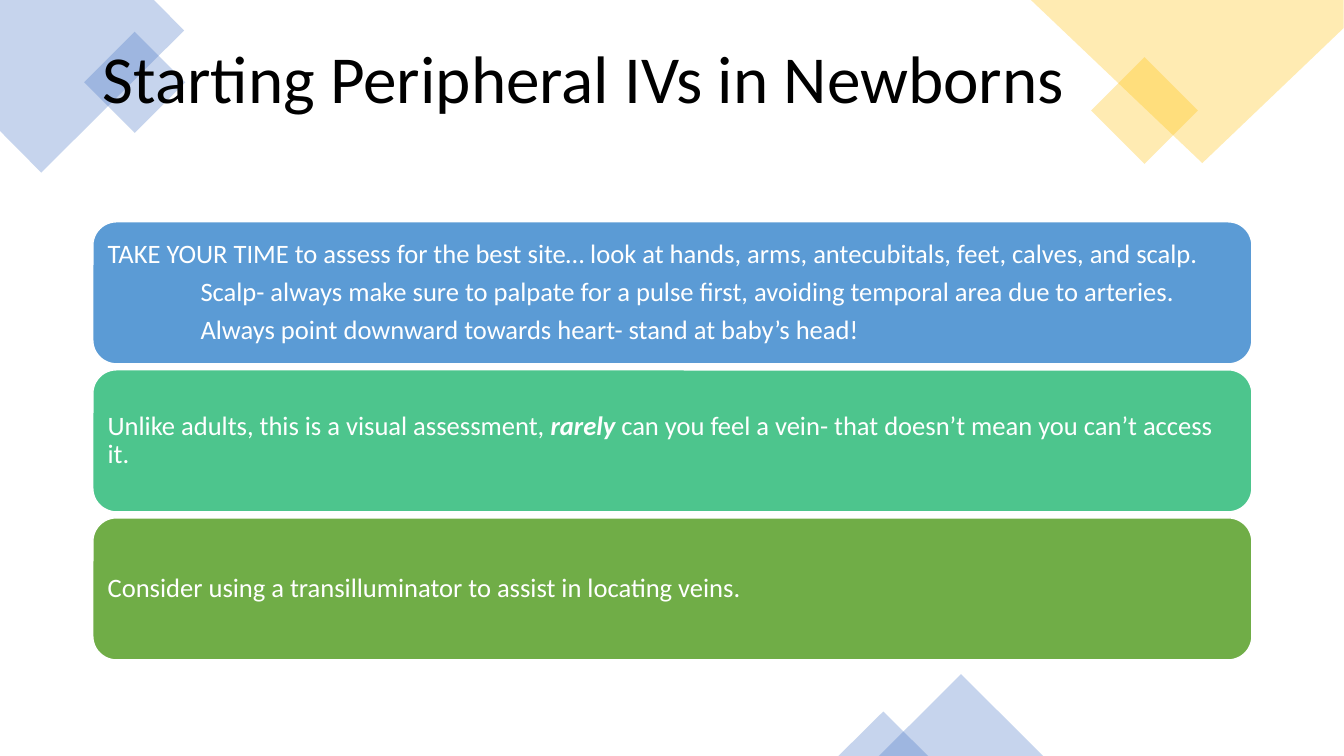
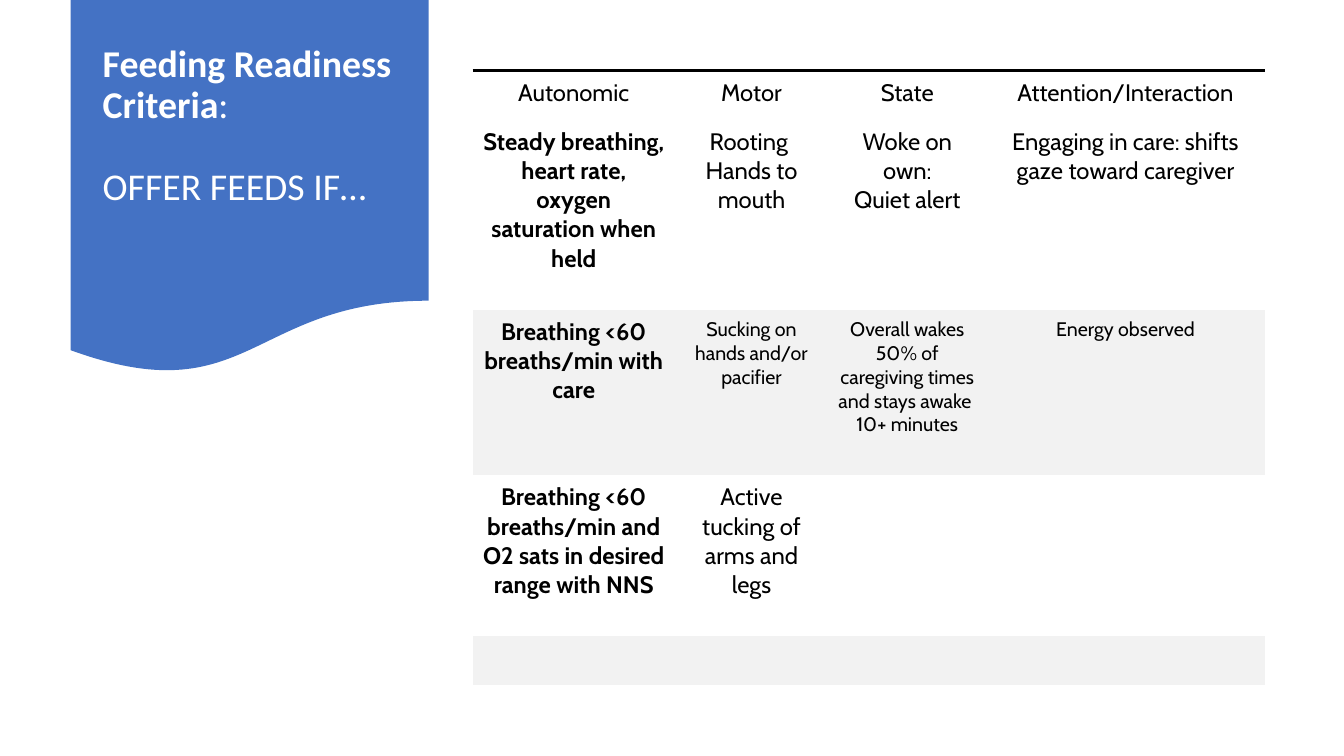
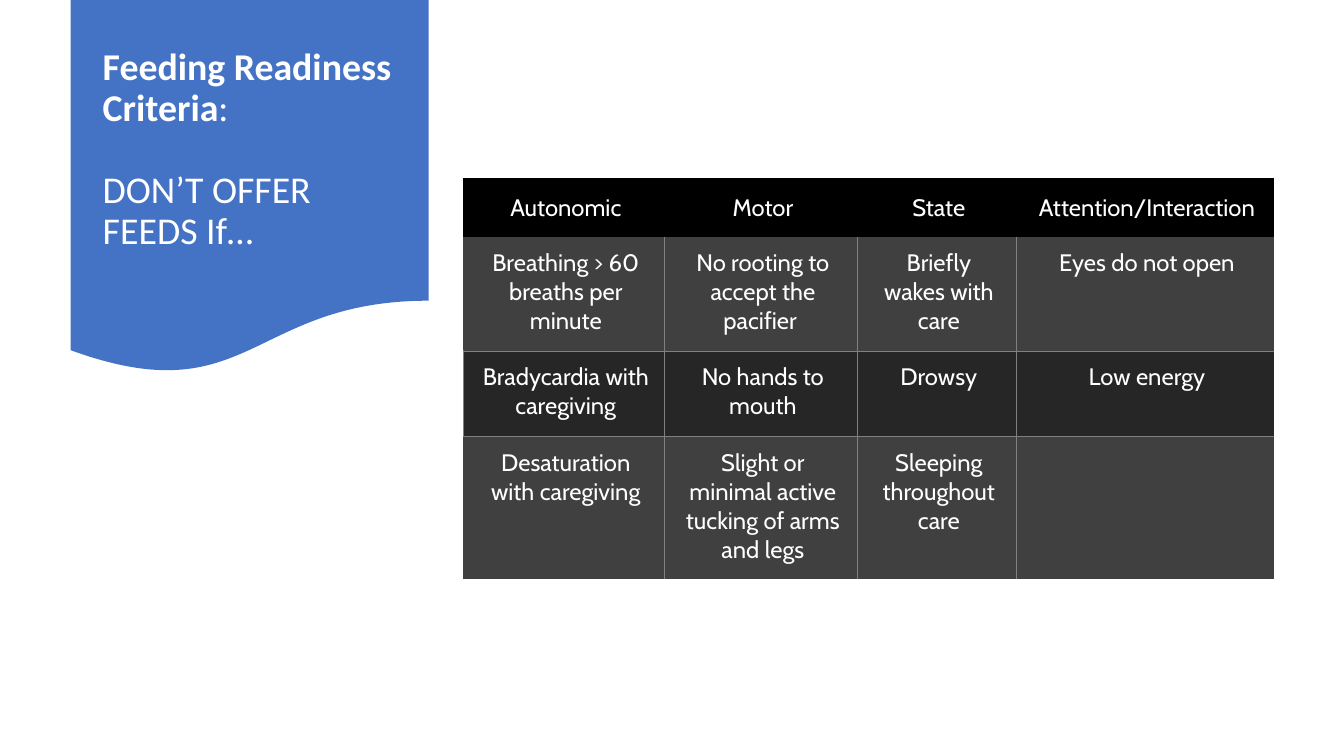
"""Build three slides on newborn IV starts and feeding readiness."""
from dataclasses import dataclass

from lxml import etree
from pptx import Presentation
from pptx.dml.color import RGBColor
from pptx.enum.shapes import MSO_SHAPE
from pptx.enum.text import MSO_ANCHOR, PP_ALIGN
from pptx.oxml.ns import qn
from pptx.util import Cm, Pt

ROUND, DIAMOND = MSO_SHAPE.ROUNDED_RECTANGLE, MSO_SHAPE.DIAMOND
TRIANGLE, BANNER = MSO_SHAPE.ISOSCELES_TRIANGLE, MSO_SHAPE.FLOWCHART_DOCUMENT
TOP, MIDDLE = MSO_ANCHOR.TOP, MSO_ANCHOR.MIDDLE
CENTER = PP_ALIGN.CENTER
NO_STYLE = "{2D5ABB26-0587-4C30-8999-92F81FD0307C}"


@dataclass(frozen=True)
class Theme:
    """Colours, fonts and type sizes."""
    black: str = "000000"
    white: str = "FFFFFF"
    blue: str = "4472C4"
    gold: str = "FFC000"
    sky: str = "5B9BD5"
    mint: str = "4DC58D"
    green: str = "70AD47"
    pale: str = "F2F2F2"
    dark: str = "404040"
    darker: str = "262626"
    rule: str = "808080"
    head_font: str = "Calibri"
    table_font: str = "Cabin"
    title: int = 48
    banner: int = 27
    card: int = 19
    cell: int = 17
    small: int = 14
    line_spacing: float = 0.9


T = Theme()

IV_TITLE = "Starting Peripheral IVs in Newborns"
CARDS = [
    (T.sky, [
        (0, [("TAKE YOUR TIME to assess for the best site… look at hands, arms, "
              "antecubitals, feet, calves, and scalp.", False)]),
        (2.34, [("Scalp- always make sure to palpate for a pulse first, avoiding "
                 "temporal area due to arteries.", False)]),
        (2.34, [("Always point downward towards heart- stand at baby’s head!", False)]),
    ]),
    (T.mint, [(0, [("Unlike adults, this is a visual assessment, ", False),
                   ("rarely", True),
                   (" can you feel a vein- that doesn’t mean you can’t access it.", False)])]),
    (T.green, [(0, [("Consider using a transilluminator to assist in locating veins.", False)])]),
]
CARD_LEFT, CARD_TOP, CARD_W, CARD_H, CARD_PITCH = 2.34, 5.59, 29.21, 3.58, 3.73

CORNERS = [
    (T.blue, [(0, 0), (3.88, 0), (4.64, 0.77), (1.04, 4.35), (0, 3.3)]),
    (T.gold, [(25.98, 0), (33.86, 0), (33.86, 0.71), (30.3, 4.11)]),
]
ACCENTS = [
    (DIAMOND, T.blue, (2.12, 0.8, 2.55, 2.55)),
    (DIAMOND, T.gold, (27.5, 1.44, 2.69, 2.69)),
    (TRIANGLE, T.blue, (22.15, 16.99, 4.14, 2.06)),
    (TRIANGLE, T.blue, (21.13, 17.93, 2.26, 1.12)),
]

BANNER_HEAD = "Feeding Readiness Criteria"
HEADINGS = ["Autonomic", "Motor", "State", "Attention/Interaction"]
OFFER = dict(
    at=(11.91, 1.78), cols=[5.1, 3.86, 3.99, 7.01], rows=[1.24, 4.78, 4.17, 4.06, 1.24],
    insets=(0.25, 0.2, 0.25, 0.2), color=T.black,
    fills=[None, None, T.pale, None, T.pale],
    cells=[
        HEADINGS,
        ["Steady breathing, heart rate, oxygen saturation when held",
         "Rooting \nHands to mouth", "Woke on own:\nQuiet alert",
         "Engaging in care: shifts gaze toward caregiver"],
        ["Breathing <60 breaths/min with care", "Sucking on hands and/or pacifier",
         "Overall wakes 50% of caregiving times and stays awake \n10+ minutes",
         "Energy observed"],
        ["Breathing <60 breaths/min and O2 sats in desired range with NNS",
         "Active tucking of arms and legs", "", ""],
        ["", "", "", ""],
    ])
DONT_OFFER = dict(
    at=(11.68, 4.52), cols=[5.05, 4.88, 3.99, 6.5], rows=[1.45, 2.87, 2.16, 3.58],
    insets=(0.41, 0.3, 0.3, 0.3), color=T.white,
    fills=[T.black, T.dark, T.darker, T.dark],
    cells=[
        HEADINGS,
        ["Breathing > 60 breaths per minute", "No rooting to accept the pacifier ",
         "Briefly wakes with care", "Eyes do not open"],
        ["Bradycardia with caregiving", "No hands to mouth", "Drowsy", "Low energy"],
        ["Desaturation with caregiving", "Slight or minimal active tucking of arms and legs",
         "Sleeping throughout care", ""],
    ])


def rgb(value):
    return RGBColor.from_string(value)


def add_run(p, text, size, color, font=T.head_font, bold=False, italic=False):
    r = p.add_run()
    r.text = text
    r.font.name, r.font.size = font, Pt(size)
    r.font.bold, r.font.italic = bold, italic
    r.font.color.rgb = rgb(color)


def set_frame(tf, insets, anchor):
    tf.word_wrap = True
    tf.vertical_anchor = anchor
    tf.margin_left, tf.margin_top, tf.margin_right, tf.margin_bottom = map(Cm, insets)


def paragraph(tf, index):
    p = tf.add_paragraph() if index else tf.paragraphs[0]
    p.line_spacing = T.line_spacing
    return p


def paint(sp, color, alpha=None):
    sp.shadow.inherit = False
    sp.fill.solid()
    sp.fill.fore_color.rgb = rgb(color)
    sp.line.fill.background()
    if alpha:
        clr = sp._element.spPr.find(qn("a:solidFill")).find(qn("a:srgbClr"))
        etree.SubElement(clr, qn("a:alpha"), val=str(alpha * 1000))


def add_preset(s, kind, box, color, alpha=None):
    sp = s.shapes.add_shape(kind, *map(Cm, box))
    paint(sp, color, alpha)
    return sp


def add_title(s, box, paragraphs, size, color, top, gap=0):
    tf = s.shapes.add_textbox(*map(Cm, box)).text_frame
    set_frame(tf, (0.25, top, 0.25, 0.13), TOP)
    for i, runs in enumerate(paragraphs):
        p = paragraph(tf, i)
        p.space_before = Pt(gap if i else 0)
        for text, bold in runs:
            add_run(p, text, size, color, bold=bold)


def add_card(s, index, color, paragraphs):
    box = (CARD_LEFT, CARD_TOP + index * CARD_PITCH, CARD_W, CARD_H)
    sp = add_preset(s, ROUND, box, color)
    sp.line.color.rgb = rgb(T.white)
    sp.line.width = Pt(1)
    tf = sp.text_frame
    set_frame(tf, (0.2, 0.2, 0.2, 0.2), MIDDLE)
    for i, (indent, runs) in enumerate(paragraphs):
        p = paragraph(tf, i)
        p.alignment = PP_ALIGN.LEFT
        p.space_after = Pt(6.5)
        p._p.get_or_add_pPr().set("marL", str(Cm(indent)))
        for text, strong in runs:
            add_run(p, text, T.card, T.white, bold=strong, italic=strong)


def set_borders(cell, borders):
    tcPr = cell._tc.get_or_add_tcPr()
    sides = [side for side in "LRTB" if side in borders]
    for i, side in enumerate(sides):
        color, width = borders[side]
        ln = etree.Element(qn(f"a:ln{side}"), w=str(Pt(width)))
        fill = etree.SubElement(ln, qn("a:solidFill"))
        etree.SubElement(fill, qn("a:srgbClr"), val=color)
        tcPr.insert(i, ln)


def offer_style(row, col):
    borders = {"T": (T.black, 2.25)} if row == 0 else {}
    size = T.small if row == 2 and col else T.cell
    return size, row > 0 and col == 0, TOP, borders


def dont_offer_style(row, col):
    if row == 0:
        sides = "LT" if col == 0 else "T"
        return T.cell, False, MIDDLE, dict.fromkeys(sides, (T.black, 1.5))
    sides = {1: "B", 2: "T"}.get(row, "")
    if col or row == 2:
        sides += "L"
    if col < len(HEADINGS) - 1:
        sides += "R"
    return T.cell, False, TOP, dict.fromkeys(sides, (T.rule, 0.5))


def add_criteria_table(s, data, style):
    cols, rows = data["cols"], data["rows"]
    box = (*data["at"], sum(cols), sum(rows))
    table = s.shapes.add_table(len(rows), len(cols), *map(Cm, box)).table
    table.first_row = table.horz_banding = False
    table._tbl.tblPr.find(qn("a:tableStyleId")).text = NO_STYLE
    for col, width in zip(table.columns, cols):
        col.width = Cm(width)
    for r, height in enumerate(rows):
        table.rows[r].height = Cm(height)
        for c, text in enumerate(data["cells"][r]):
            cell = table.cell(r, c)
            size, bold, anchor, borders = style(r, c)
            (cell.margin_left, cell.margin_top,
             cell.margin_right, cell.margin_bottom) = map(Cm, data["insets"])
            cell.vertical_anchor = anchor
            if data["fills"][r]:
                cell.fill.solid()
                cell.fill.fore_color.rgb = rgb(data["fills"][r])
            else:
                cell.fill.background()
            set_borders(cell, borders)
            tf = cell.text_frame
            for i, line in enumerate(text.split("\n")):
                p = tf.add_paragraph() if i else tf.paragraphs[0]
                p.alignment = CENTER
                p.font.size = Pt(size)
                if line:
                    add_run(p, line, size, data["color"], T.table_font, bold)


def new_slide(prs):
    return prs.slides.add_slide(prs.slide_layouts[6])


def iv_slide(prs):
    s = new_slide(prs)
    for color, points in CORNERS:
        outline = [(Cm(x), Cm(y)) for x, y in points]
        fb = s.shapes.build_freeform(*outline[0])
        fb.add_line_segments(outline[1:], close=True)
        paint(fb.convert_to_shape(), color, 30)
    for kind, color, box in ACCENTS:
        add_preset(s, kind, box, color, 30)
    add_title(s, (2.34, 1.02, 29.21, 3.68), [[(IV_TITLE, False)]], T.title, T.black, 0.13)
    for i, (color, paragraphs) in enumerate(CARDS):
        add_card(s, i, color, paragraphs)


def feeding_slide(prs, advice, top, data, style):
    s = new_slide(prs)
    add_preset(s, BANNER, (1.78, 0, 9.02, 9.45), T.blue)
    add_title(s, (2.34, 0.48, 7.9, 6.58),
              [[(BANNER_HEAD, True), (":", False)], [(advice, False)]],
              T.banner, T.white, top, gap=29.5)
    add_criteria_table(s, data, style)


def main():
    prs = Presentation()
    prs.slide_width, prs.slide_height = Cm(33.87), Cm(19.05)
    iv_slide(prs)
    feeding_slide(prs, "OFFER FEEDS IF…", 0.65, OFFER, offer_style)
    feeding_slide(prs, "DON’T OFFER FEEDS If…", 0.72, DONT_OFFER, dont_offer_style)
    prs.save("out.pptx")


if __name__ == "__main__":
    main()
